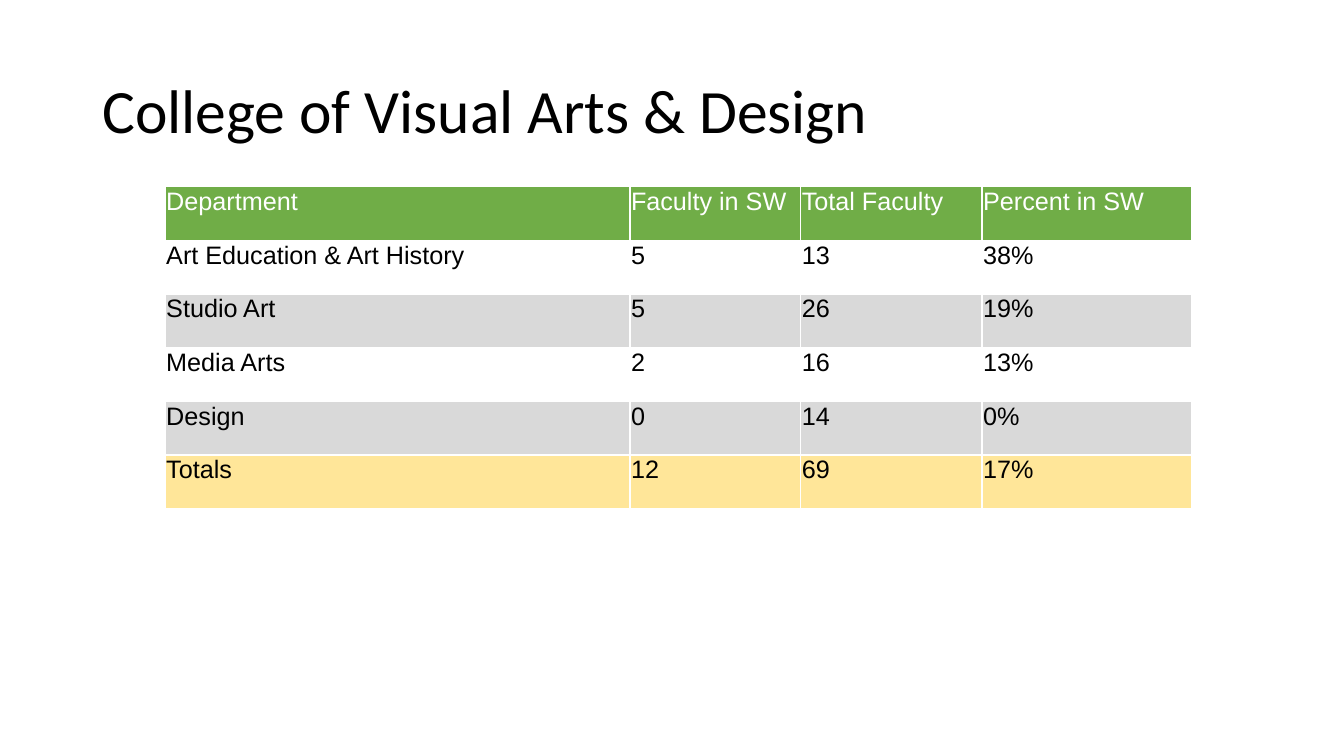
from dataclasses import dataclass

from pptx import Presentation
from pptx.dml.color import RGBColor
from pptx.enum.text import MSO_ANCHOR
from pptx.oxml import parse_xml
from pptx.oxml.ns import nsdecls
from pptx.util import Pt


@dataclass(frozen=True)
class Theme:
    title_font: str = "Calibri"
    body_font: str = "Arial"
    title_size: float = 44
    body_size: float = 18
    text: str = "000000"
    white: str = "FFFFFF"
    header: str = "70AD47"
    band: str = "D9D9D9"
    totals: str = "FFE699"


THEME = Theme()

HEADER = ("Department", "Faculty in SW", "Total Faculty", "Percent in SW")
DEPARTMENTS = [
    ("Art Education & Art History", "5", "13", "38%"),
    ("Studio Art", "5", "26", "19%"),
    ("Media Arts", "2", "16", "13%"),
    ("Design", "0", "14", "0%"),
]
TOTALS = ("Totals", "12", "69", "17%")
COLUMN_WIDTHS = (332, 122, 129.5, 149.5)


def add_run(p, text, font, size, color):
    r = p.add_run()
    r.text = text
    r.font.name = font
    r.font.size = Pt(size)
    r.font.color.rgb = RGBColor.from_string(color)


def add_title(s, text, left, top, width, height):
    sp = s.shapes.add_textbox(Pt(left), Pt(top), Pt(width), Pt(height))
    tf = sp.text_frame
    tf.word_wrap = True
    tf.vertical_anchor = MSO_ANCHOR.MIDDLE
    p = tf.paragraphs[0]
    p.line_spacing = 0.9
    add_run(p, text, THEME.title_font, THEME.title_size, THEME.text)


def add_borders(cell):
    # Borders come before the fill in the cell properties
    tc_pr = cell._tc.get_or_add_tcPr()
    for i, side in enumerate(("lnL", "lnR", "lnT", "lnB")):
        tc_pr.insert(i, parse_xml(
            f'<a:{side} {nsdecls("a")} w="{Pt(1)}"><a:solidFill>'
            f'<a:srgbClr val="{THEME.white}"/></a:solidFill></a:{side}>'))


def fill_cell(cell, text, color, fill):
    cell.margin_left = cell.margin_right = cell.margin_top = Pt(0.75)
    cell.margin_bottom = 0
    cell.vertical_anchor = MSO_ANCHOR.TOP
    if fill:
        cell.fill.solid()
        cell.fill.fore_color.rgb = RGBColor.from_string(fill)
    else:
        cell.fill.background()
    add_borders(cell)
    add_run(cell.text_frame.paragraphs[0], text,
            THEME.body_font, THEME.body_size, color)


def add_faculty_table(s, left, top, height):
    # Each row: values, text colour, fill; every second department is banded
    rows = [(HEADER, THEME.white, THEME.header)]
    for i, values in enumerate(DEPARTMENTS):
        rows.append((values, THEME.text, THEME.band if i % 2 else None))
    rows.append((TOTALS, THEME.text, THEME.totals))

    table = s.shapes.add_table(len(rows), len(HEADER), Pt(left), Pt(top),
                               Pt(sum(COLUMN_WIDTHS)), Pt(height)).table
    table.horz_banding = False
    for column, width in zip(table.columns, COLUMN_WIDTHS):
        column.width = Pt(width)
    for row, (values, color, fill) in zip(table.rows, rows):
        row.height = Pt(height / len(rows))
        for cell, text in zip(row.cells, values):
            fill_cell(cell, text, color, fill)


def main():
    prs = Presentation()
    prs.slide_width, prs.slide_height = Pt(960), Pt(540)
    s = prs.slides.add_slide(prs.slide_layouts[6])
    add_title(s, "College of Visual Arts & Design", 66, 28.75, 828, 104.4)
    add_faculty_table(s, 118, 133.3, 230)
    prs.save("out.pptx")


if __name__ == "__main__":
    main()
